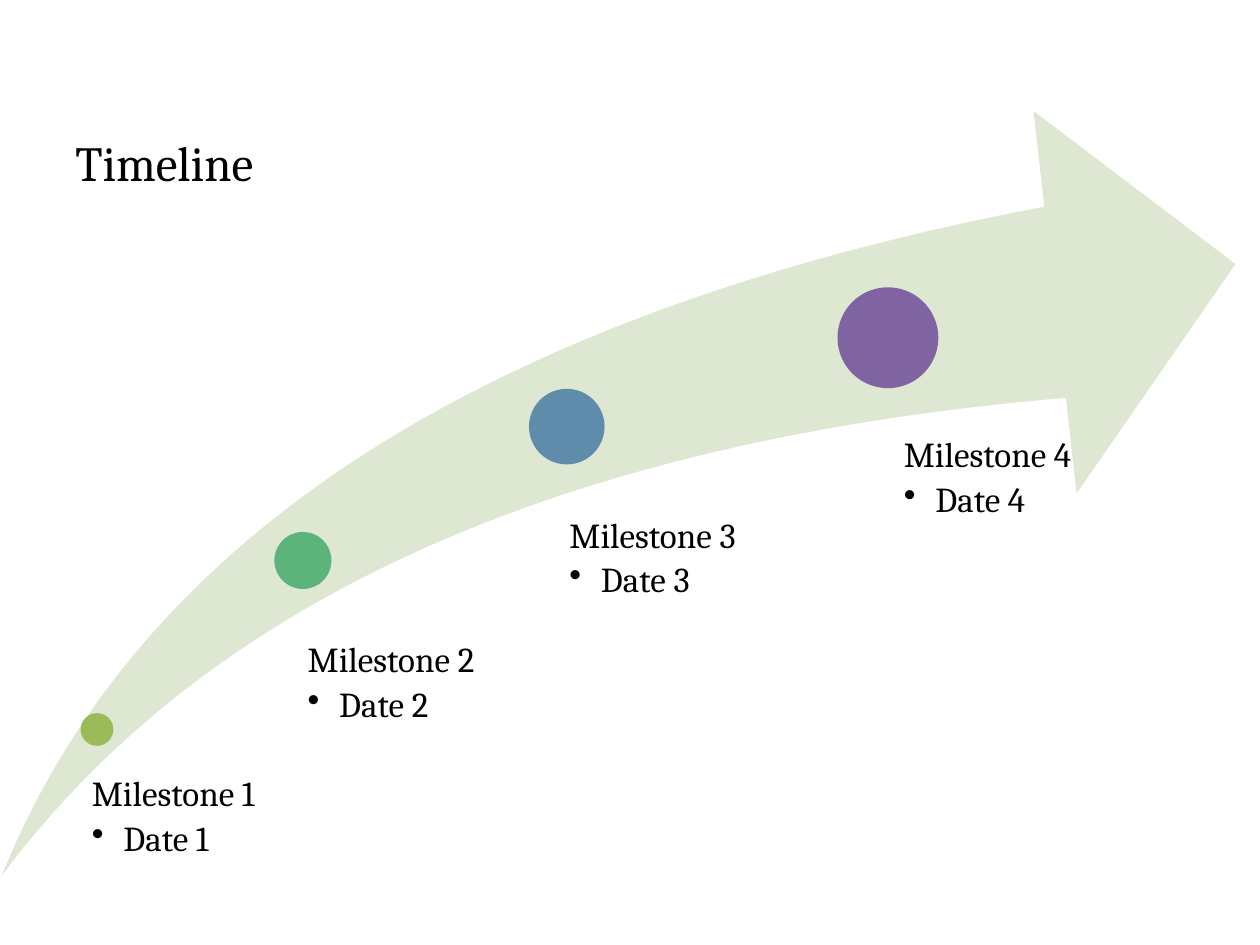
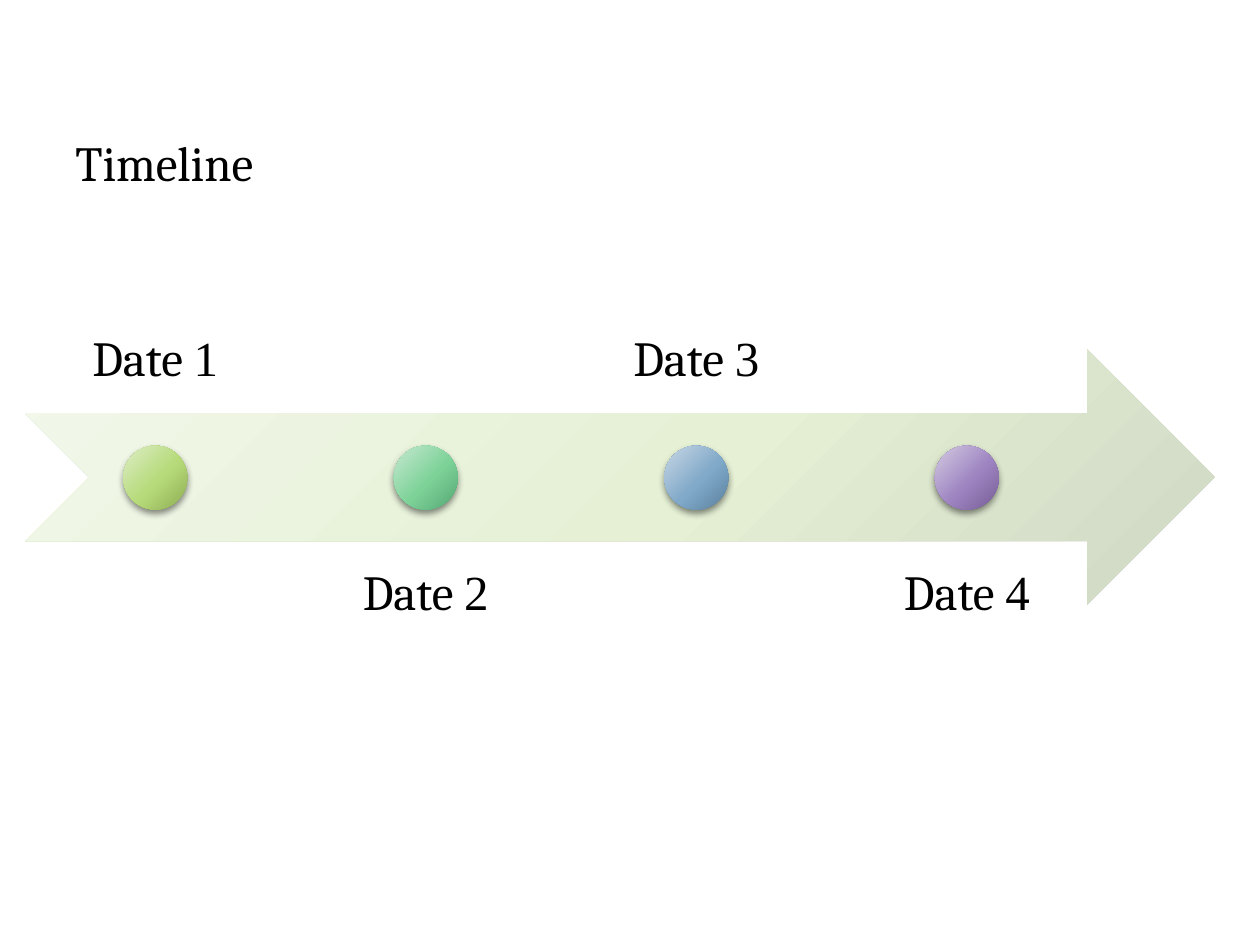
from dataclasses import dataclass

from pptx import Presentation
from pptx.dml.color import RGBColor
from pptx.enum.shapes import MSO_SHAPE as Preset
from pptx.enum.text import MSO_ANCHOR as Anchor, PP_ALIGN as Align
from pptx.oxml import parse_xml
from pptx.oxml.ns import nsdecls, qn
from pptx.shapes.autoshape import Shape
from pptx.slide import Slide
from pptx.text.text import TextFrame
from pptx.util import Pt

BLACK = RGBColor(0x00, 0x00, 0x00)
SWOOSH = RGBColor(0xDE, 0xE7, 0xD1)
LIME = RGBColor(0x9B, 0xBB, 0x59)
GREEN = RGBColor(0x5C, 0xB3, 0x7C)
BLUE = RGBColor(0x60, 0x8C, 0xAB)
PURPLE = RGBColor(0x80, 0x64, 0xA2)

Gradient = tuple[RGBColor, RGBColor, RGBColor]
ARROW_GRADIENT: Gradient = (
    RGBColor(0xF2, 0xF8, 0xEA), RGBColor(0xE5, 0xF0, 0xD5), RGBColor(0xCF, 0xD7, 0xC3))
DOT_GRADIENTS: list[Gradient] = [
    (RGBColor(0xDD, 0xED, 0xC6), RGBColor(0xB6, 0xDA, 0x79), RGBColor(0x90, 0xAE, 0x53)),
    (RGBColor(0xC7, 0xE9, 0xD1), RGBColor(0x7D, 0xD2, 0x98), RGBColor(0x56, 0xA7, 0x74)),
    (RGBColor(0xC9, 0xD8, 0xE5), RGBColor(0x81, 0xA9, 0xC9), RGBColor(0x5A, 0x82, 0x9F)),
    (RGBColor(0xD4, 0xCB, 0xE2), RGBColor(0x9E, 0x85, 0xC1), RGBColor(0x77, 0x5D, 0x97)),
]
GRADIENT_STOPS = (0, 55, 100)

HEADING_FONT = "Cambria"
NUMBER_FONT = "Times New Roman"
TITLE_SIZE = 28
LABEL_SIZE = 20
LINE_SPACING = 0.9


@dataclass(frozen=True)
class Box:
    """A rectangle in points."""
    left: float
    top: float
    width: float
    height: float

    def lengths(self) -> tuple[Pt, Pt, Pt, Pt]:
        """Return the four lengths that python-pptx expects."""
        return Pt(self.left), Pt(self.top), Pt(self.width), Pt(self.height)


@dataclass(frozen=True)
class Milestone:
    """A dot on the curved arrow with its label."""
    dot: Box
    color: RGBColor
    label: Box
    inset: float


MILESTONES = [
    Milestone(Box(46.1, 407.5, 18.7, 18.7), LIME, Box(42.5, 443.5, 168, 121), 10),
    Milestone(Box(156.8, 304, 32.6, 32.6), GREEN, Box(158.5, 367.2, 171, 189), 17.3),
    Milestone(Box(302.3, 222.2, 43.2, 43.2), BLUE, Box(302.4, 296, 171, 191), 23),
    Milestone(Box(478.6, 164.2, 57.6, 57.6), PURPLE, Box(486, 250, 171, 235), 30.5),
]


def add_preset(slide: Slide, preset: Preset, box: Box) -> Shape:
    """Add a preset shape without line or shadow."""
    shape = slide.shapes.add_shape(preset, *box.lengths())
    shape.shadow.inherit = False
    shape.line.fill.background()
    return shape


def fill_solid(shape: Shape, color: RGBColor) -> None:
    """Fill a shape with one colour."""
    shape.fill.solid()
    shape.fill.fore_color.rgb = color


def fill_gradient(shape: Shape, colors: Gradient) -> None:
    """Fill a shape with a circular gradient centred beyond its corner."""
    stops = "".join(
        f'<a:gs pos="{stop * 1000}"><a:srgbClr val="{color}"/></a:gs>'
        for stop, color in zip(GRADIENT_STOPS, colors))
    gradient = parse_xml(
        f'<a:gradFill {nsdecls("a")} rotWithShape="1"><a:gsLst>{stops}</a:gsLst>'
        '<a:path path="circle"><a:fillToRect l="-40000" t="-90000" r="140000" b="190000"/>'
        "</a:path></a:gradFill>")
    shape.fill.background()
    properties = shape._element.spPr
    properties.replace(properties.find(qn("a:noFill")), gradient)


def add_shadow(shape: Shape) -> None:
    """Give a shape a soft shadow below it."""
    effects = shape._element.spPr.find(qn("a:effectLst"))
    effects.append(parse_xml(
        f'<a:outerShdw {nsdecls("a")} blurRad="{Pt(4)}" dist="{Pt(2)}" dir="5400000" '
        'rotWithShape="0"><a:srgbClr val="000000"><a:alpha val="45000"/></a:srgbClr>'
        "</a:outerShdw>"))


def add_text_frame(slide: Slide, box: Box, insets: tuple[float, float, float, float],
                   anchor: Anchor = Anchor.TOP) -> TextFrame:
    """Add a wrapping text box with left, top, right and bottom insets."""
    frame = slide.shapes.add_textbox(*box.lengths()).text_frame
    frame.word_wrap = True
    frame.vertical_anchor = anchor
    (frame.margin_left, frame.margin_top,
     frame.margin_right, frame.margin_bottom) = map(Pt, insets)
    return frame


def set_font(target, size: float, name: str = HEADING_FONT) -> None:
    """Set the font of a paragraph or run."""
    target.font.name = name
    target.font.size = Pt(size)
    target.font.color.rgb = BLACK


def add_title(slide: Slide) -> None:
    """Add the slide title."""
    frame = add_text_frame(slide, Box(36, 72, 648, 72), (7.2, 3.6, 7.2, 3.6))
    paragraph = frame.paragraphs[0]
    paragraph.text = "Timeline"
    set_font(paragraph, TITLE_SIZE)


def add_milestone(slide: Slide, number: int, milestone: Milestone) -> None:
    """Add a dot and its label with a bulleted date."""
    fill_solid(add_preset(slide, Preset.OVAL, milestone.dot), milestone.color)
    frame = add_text_frame(slide, milestone.label, (milestone.inset, 0, 0, 0))
    heading, date = frame.paragraphs[0], frame.add_paragraph()
    heading.text = f"Milestone {number}"
    heading.space_after = Pt(4)
    date.text = f"Date {number}"
    date.level = 1
    properties = date._p.get_or_add_pPr()
    properties.set("marL", str(Pt(18)))
    properties.set("indent", str(Pt(-18)))
    properties.append(parse_xml(f'<a:buChar {nsdecls("a")} char="•"/>'))
    for paragraph in (heading, date):
        paragraph.line_spacing = LINE_SPACING
        set_font(paragraph, LABEL_SIZE)


def add_date(slide: Slide, index: int, gradient: Gradient) -> None:
    """Add a date on alternating sides of the straight arrow, with its dot."""
    center = 88.7 + index * 154.6
    above = index % 2 == 0
    label = Box(center - 73.5, 90 if above else 309.6, 147, 146.2)
    frame = add_text_frame(slide, label, (15.8,) * 4, Anchor.BOTTOM if above else Anchor.TOP)
    paragraph = frame.paragraphs[0]
    paragraph.alignment = Align.CENTER
    paragraph.line_spacing = LINE_SPACING
    for text, font in (("Date ", HEADING_FONT), (str(index + 1), NUMBER_FONT)):
        run = paragraph.add_run()
        run.text = text
        set_font(run, TITLE_SIZE, font)
    dot = add_preset(slide, Preset.OVAL, Box(center - 18.3, 254.7, 36.6, 36.6))
    fill_gradient(dot, gradient)
    add_shadow(dot)


def build_curved_timeline(slide: Slide) -> None:
    """Draw the rising timeline."""
    arrow = add_preset(slide, Preset.SWOOSH_ARROW, Box(1, 63.5, 705, 437))
    arrow.adjustments[0] = 0.25
    arrow.adjustments[1] = 0.25
    fill_solid(arrow, SWOOSH)
    for number, milestone in enumerate(MILESTONES, 1):
        add_milestone(slide, number, milestone)
    add_title(slide)


def build_straight_timeline(slide: Slide) -> None:
    """Draw the level timeline."""
    arrow = add_preset(slide, Preset.NOTCHED_RIGHT_ARROW, Box(14.3, 199.6, 680, 146.2))
    fill_gradient(arrow, ARROW_GRADIENT)
    for index, gradient in enumerate(DOT_GRADIENTS):
        add_date(slide, index, gradient)
    add_title(slide)


def main() -> None:
    """Build and save the presentation."""
    presentation = Presentation()
    presentation.slide_width = Pt(720)
    presentation.slide_height = Pt(540)
    blank = presentation.slide_layouts[6]
    for build in (build_curved_timeline, build_straight_timeline):
        build(presentation.slides.add_slide(blank))
    presentation.save("out.pptx")


if __name__ == "__main__":
    main()
